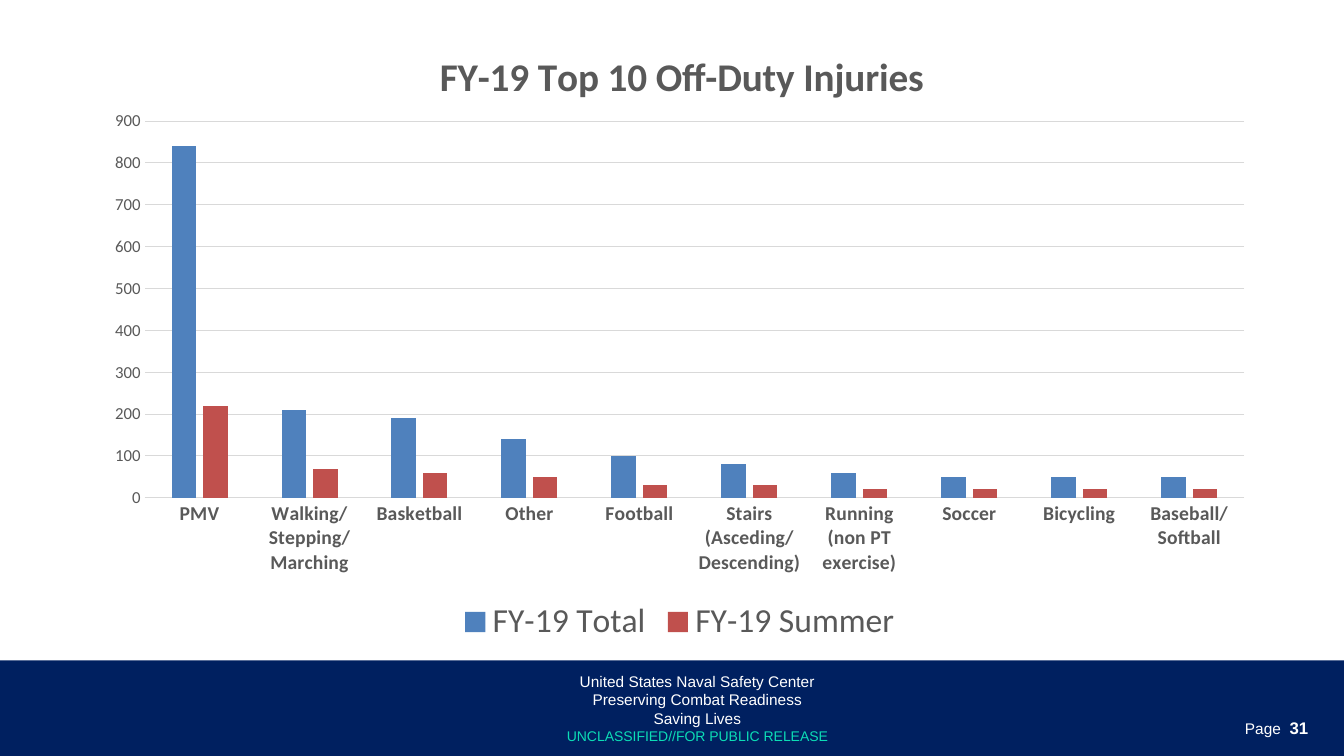
import pptx
import pptx.chart.data
import pptx.dml.color
import pptx.enum.chart
import pptx.enum.shapes
import pptx.enum.text
import pptx.oxml
import pptx.oxml.ns
import pptx.util

Cm = pptx.util.Cm
Pt = pptx.util.Pt
ALIGN = pptx.enum.text.PP_ALIGN
TICK = pptx.enum.chart.XL_TICK_MARK

COLORS = {
    "navy": "002060",
    "white": "FFFFFF",
    "teal": "0CDDB6",
    "gray": "595959",
    "rule": "D9D9D9",
    "blue": "4F81BD",
    "red": "C0504D",
}

SPORTS = [
    "PMV", "Walking/Stepping/Marching", "Basketball", "Other", "Football",
    "Stairs (Asceding/Descending)", "Running (non PT exercise)", "Soccer",
    "Bicycling", "Baseball/Softball",
]
SERIES = [
    ("FY-19 Total", "blue", [840, 210, 190, 140, 100, 80, 60, 50, 50, 50]),
    ("FY-19 Summer", "red", [220, 70, 60, 50, 30, 30, 20, 20, 20, 20]),
]


def place(parent, spot, **parts):
    """Give a chart part a fixed place, in fractions of the chart."""
    old = parent.find(pptx.oxml.ns.qn("c:layout"))
    if old is not None:
        parent.remove(old)
    modes = '<c:xMode val="edge"/><c:yMode val="edge"/>'
    sizes = "".join(f'<c:{key} val="{val}"/>' for key, val in parts.items())
    inner = '<c:layoutTarget val="inner"/>' if "w" in parts else ""
    parent.insert(spot, pptx.oxml.parse_xml(
        f'<c:layout {pptx.oxml.ns.nsdecls("c")}><c:manualLayout>'
        f"{inner}{modes}{sizes}</c:manualLayout></c:layout>"))


class Deck:
    def __init__(self, slide, face="Arial"):
        self.slide = slide
        self.face = face

    def color(self, name):
        return pptx.dml.color.RGBColor.from_string(COLORS[name])

    def style(self, font, size, color, bold=False, face=None):
        font.name = face or self.face
        font.size = Pt(size)
        font.bold = bold
        font.color.rgb = self.color(color)

    def rule(self, line):
        line.color.rgb = self.color("rule")
        line.width = Pt(0.75)

    def band(self, left, top, width, height, color):
        band = self.slide.shapes.add_shape(
            pptx.enum.shapes.MSO_SHAPE.RECTANGLE,
            Cm(left), Cm(top), Cm(width), Cm(height))
        band.shadow.inherit = False
        band.fill.solid()
        band.fill.fore_color.rgb = self.color(color)
        band.line.fill.background()

    def text(self, left, top, width, height, lines, align):
        """Each line is a list of runs: text, size, color, bold."""
        box = self.slide.shapes.add_textbox(
            Cm(left), Cm(top), Cm(width), Cm(height))
        frame = box.text_frame
        frame.word_wrap = True
        for num, runs in enumerate(lines):
            para = frame.add_paragraph() if num else frame.paragraphs[0]
            para.alignment = align
            for words, size, color, bold in runs:
                run = para.add_run()
                run.text = words
                self.style(run.font, size, color, bold)

    def chart(self, left, top, width, height, title, cats, series):
        data = pptx.chart.data.CategoryChartData()
        data.categories = cats
        for name, _, vals in series:
            data.add_series(name, vals)
        chart = self.slide.shapes.add_chart(
            pptx.enum.chart.XL_CHART_TYPE.COLUMN_CLUSTERED,
            Cm(left), Cm(top), Cm(width), Cm(height), data).chart
        face = "Calibri"
        self.style(chart.font, 10, "gray", face=face)

        chart.has_title = True
        frame = chart.chart_title.text_frame
        frame.text = title
        self.style(frame.paragraphs[0].runs[0].font, 28, "gray", True, face)
        place(chart.chart_title._element, 1, x=0.29, y=0.03)

        plot = chart.plots[0]
        plot.gap_width = 219
        plot.overlap = -27
        plot.vary_by_categories = False
        for bars, (_, color, _) in zip(plot.series, series):
            bars.format.fill.solid()
            bars.format.fill.fore_color.rgb = self.color(color)
        place(plot._element.getparent(), 0, x=0.045, y=0.155, w=0.935, h=0.603)

        for axis, size, bold in ((chart.category_axis, 14, True),
                                 (chart.value_axis, 12, False)):
            axis.major_tick_mark = axis.minor_tick_mark = TICK.NONE
            self.style(axis.tick_labels.font, size, "gray", bold, face)
        self.rule(chart.category_axis.format.line)
        scale = chart.value_axis
        scale.minimum_scale, scale.maximum_scale = 0, 900
        scale.major_unit = 100
        scale.format.line.fill.background()
        self.rule(scale.major_gridlines.format.line)

        chart.has_legend = True
        chart.legend.position = pptx.enum.chart.XL_LEGEND_POSITION.BOTTOM
        chart.legend.include_in_layout = False
        self.style(chart.legend.font, 24, "gray", face=face)


def main():
    show = pptx.Presentation()
    show.slide_width = Cm(33.87)
    show.slide_height = Cm(19.05)
    deck = Deck(show.slides.add_slide(show.slide_layouts[6]))

    deck.band(0, 16.64, 33.87, 2.41, "navy")
    deck.text(30.2, 17.96, 3.02, 0.76,
              [[("Page  ", 11, "white", False), ("31", 12, "white", True)]],
              ALIGN.RIGHT)
    motto = ["United States Naval Safety Center",
             "Preserving Combat Readiness", "Saving Lives"]
    lines = [[(words, 11, "white", False)] for words in motto]
    lines.append([("UNCLASSIFIED//FOR PUBLIC RELEASE", 10, "teal", False)])
    deck.text(10.16, 16.81, 14.83, 2.11, lines, ALIGN.CENTER)
    deck.chart(2.31, 0.61, 29.64, 15.75,
               "FY-19 Top 10 Off-Duty Injuries", SPORTS, SERIES)
    show.save("out.pptx")


if __name__ == "__main__":
    main()
